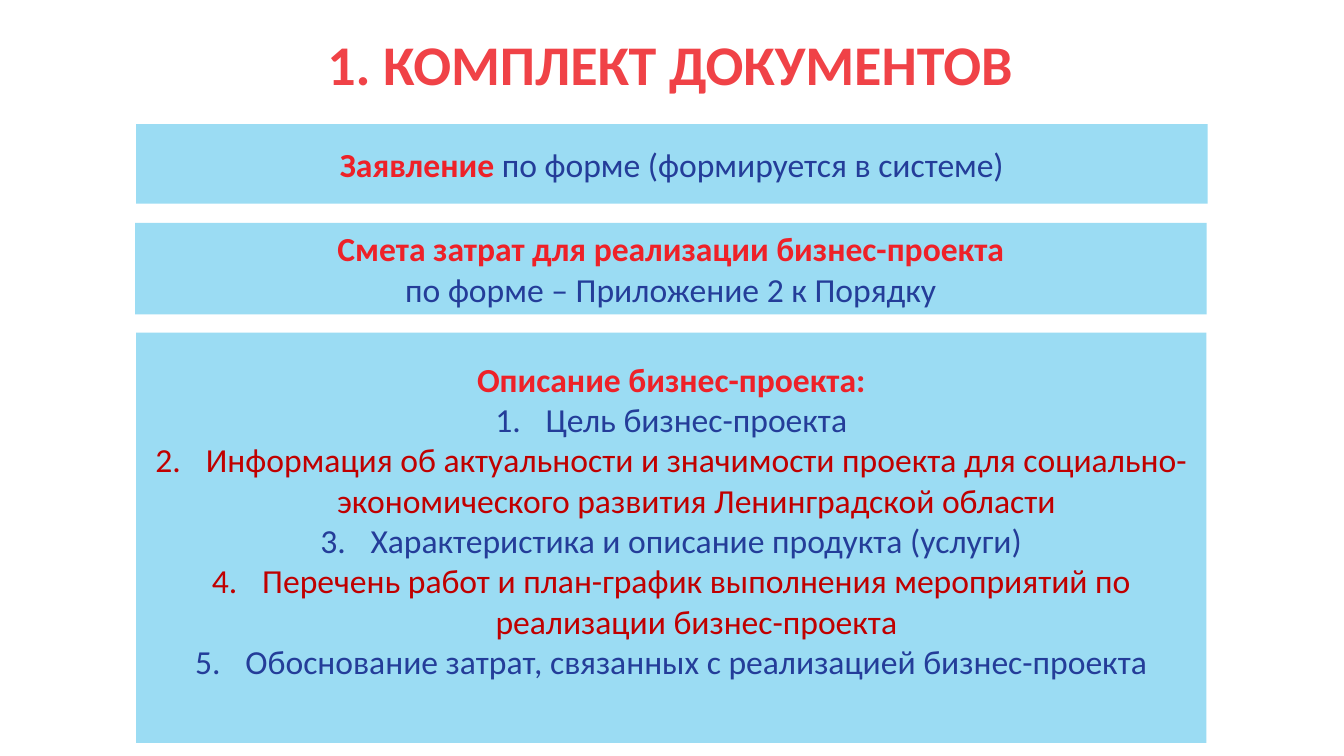
from lxml import etree
from pptx import Presentation
from pptx.dml.color import RGBColor
from pptx.enum import shapes, text
from pptx.oxml import ns
from pptx.util import Pt

COLORS = {"title": "F04247", "panel": "9BDCF3", "heading": "EE2128",
          "blue": "243D99", "crimson": "C00000"}
FONT = "Calibri"
GOALS = [
    "Цель бизнес-проекта",
    "Информация об актуальности и значимости проекта для "
    "социально-экономического развития Ленинградской области",
    "Характеристика и описание продукта (услуги)",
    "Перечень работ и план-график выполнения мероприятий по реализации бизнес-проекта",
    "Обоснование затрат, связанных с реализацией бизнес-проекта",
]


def format_run(run, size, color, bold=False):
    """Set the font of one run."""
    run.font.name = FONT
    run.font.size = Pt(size)
    run.font.bold = bold
    run.font.color.rgb = RGBColor.from_string(COLORS[color])


def number_paragraph(paragraph):
    """Give a paragraph automatic numbering with a hanging indent."""
    properties = paragraph._p.get_or_add_pPr()
    properties.set("marL", str(Pt(36)))
    properties.set("indent", str(Pt(-36)))
    etree.SubElement(properties, ns.qn("a:buFont"), typeface="+mj-lt")
    etree.SubElement(properties, ns.qn("a:buAutoNum"), type="arabicPeriod")


def add_title(slide, box, wording):
    """Place and format the slide title."""
    title = slide.shapes.title
    title.left, title.top, title.width, title.height = map(Pt, box)
    frame = title.text_frame
    frame.text = wording
    frame.auto_size = text.MSO_AUTO_SIZE.NONE
    frame.vertical_anchor = text.MSO_ANCHOR.MIDDLE
    paragraph = frame.paragraphs[0]
    paragraph.alignment = text.PP_ALIGN.CENTER
    paragraph.line_spacing = 0.96
    format_run(paragraph.runs[0], 40, "title", True)


def add_panel(slide, box, lines, bottom_inset=3.6):
    """Draw a panel; each line is a list of (wording, color, bold) and a numbered flag."""
    panel = slide.shapes.add_shape(shapes.MSO_SHAPE.PENTAGON, *map(Pt, box))
    panel.adjustments[0] = 0
    panel.shadow.inherit = False
    panel.fill.solid()
    panel.fill.fore_color.rgb = RGBColor.from_string(COLORS["panel"])
    panel.line.fill.background()
    frame = panel.text_frame
    frame.word_wrap = True
    frame.vertical_anchor = text.MSO_ANCHOR.MIDDLE
    frame.margin_bottom = Pt(bottom_inset)
    for index, (pieces, numbered) in enumerate(lines):
        paragraph = frame.add_paragraph() if index else frame.paragraphs[0]
        paragraph.alignment = text.PP_ALIGN.CENTER
        if numbered:
            number_paragraph(paragraph)
        for wording, color, bold in pieces:
            run = paragraph.add_run()
            run.text = wording
            format_run(run, 24, color, bold)


def build_documents_slide(presentation):
    """Build the slide listing the required documents."""
    slide = presentation.slides.add_slide(presentation.slide_layouts[5])
    add_title(slide, (-1.4, -4.3, 960, 103), "1. КОМПЛЕКТ ДОКУМЕНТОВ")
    add_panel(slide, (97.2, 88.6, 765.4, 56.9), [
        ([("Заявление ", "heading", True),
          ("по форме (формируется в системе)", "blue", False)], False)])
    add_panel(slide, (96.5, 159.1, 765.4, 65.5), [
        ([("Смета затрат для реализации бизнес-проекта", "heading", True)], False),
        ([("по форме – Приложение 2 к Порядку", "blue", False)], False)])
    description = [([("Описание бизнес-проекта:", "heading", True)], False)]
    for index, goal in enumerate(GOALS):
        color = "crimson" if index % 2 else "blue"
        description.append(([(goal, color, False)], True))
    add_panel(slide, (97.2, 237.6, 764.6, 293), description, bottom_inset=29)


def main():
    """Create and save the presentation."""
    presentation = Presentation()
    presentation.slide_width, presentation.slide_height = Pt(960), Pt(540)
    build_documents_slide(presentation)
    presentation.save("out.pptx")


if __name__ == "__main__":
    main()
